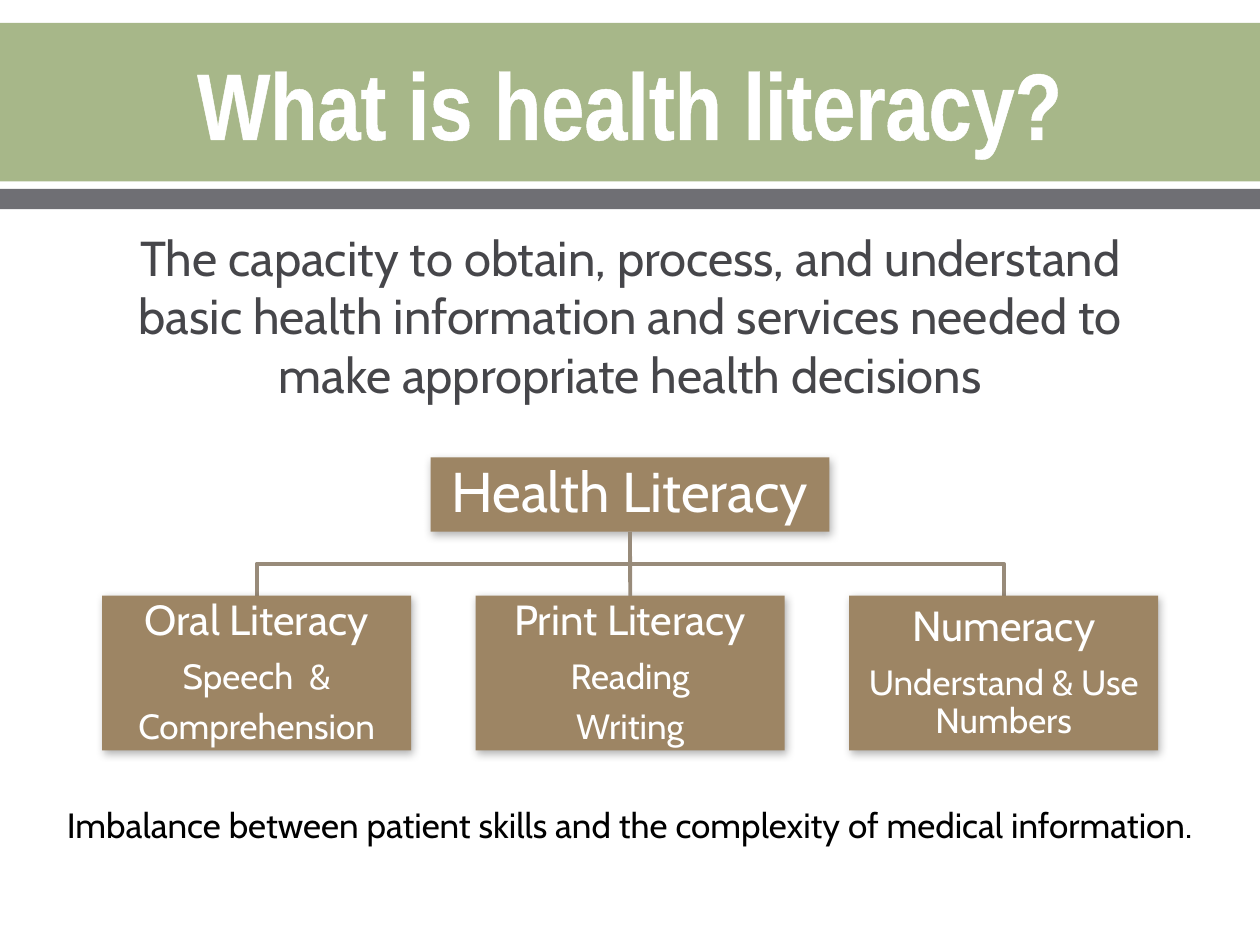
import pptx
import pptx.dml.color
import pptx.enum.shapes
import pptx.enum.text
import pptx.oxml
import pptx.oxml.ns
import pptx.util
from dataclasses import dataclass
from lxml import etree
from pptx.util import Cm, Pt

GREEN, GREY, BROWN, LINE = "A7B789", "6F6F74", "9D8564", "988B7A"
WHITE, BLACK, BODY = "FFFFFF", "000000", "46464A"
NAMESPACE = pptx.oxml.ns.nsdecls("a")
SHADOW = (
    f'<a:effectLst {NAMESPACE}><a:outerShdw blurRad="{Pt(5)}" dist="{Pt(2)}" '
    'dir="3600000" algn="tl" rotWithShape="0"><a:srgbClr val="000000">'
    '<a:alpha val="30000"/></a:srgbClr></a:outerShdw></a:effectLst>'
)
TEXT_OUTLINE = (
    f'<a:ln {NAMESPACE} w="{Pt(1.1)}"><a:solidFill>'
    f'<a:srgbClr val="{WHITE}"/></a:solidFill></a:ln>'
)


@dataclass
class Area:
    left: float
    top: float
    width: float
    height: float

    @property
    def middle(self) -> float:
        return self.left + self.width / 2

    @property
    def bottom(self) -> float:
        return self.top + self.height

    def lengths(self) -> list:
        return [Cm(value) for value in (self.left, self.top, self.width, self.height)]


@dataclass
class Node:
    area: Area
    lines: list[str]
    sizes: list[int]


ROOT = Node(Area(8.68, 9.22, 8.04, 1.5), ["Health Literacy"], [32])
BRANCHES = [
    Node(Area(2.06 + 7.53 * column, 12.01, 6.23, 3.12), lines, [24, 20, 20])
    for column, lines in enumerate([
        ["Oral Literacy", "Speech  &", "Comprehension"],
        ["Print Literacy", "Reading", "Writing"],
        ["Numeracy", "Understand & Use Numbers"],
    ])
]


def rgb(value: str) -> pptx.dml.color.RGBColor:
    return pptx.dml.color.RGBColor.from_string(value)


def place(shape, area: Area) -> None:
    shape.left, shape.top, shape.width, shape.height = area.lengths()


def format_paragraph(para, size: int, color: str, font: str = "Cabin") -> None:
    para.alignment = pptx.enum.text.PP_ALIGN.CENTER
    for span in para.runs:
        span.font.size = Pt(size)
        span.font.name = font
        span.font.color.rgb = rgb(color)


def add_rectangle(page, area: Area, color: str):
    box = page.shapes.add_shape(pptx.enum.shapes.MSO_SHAPE.RECTANGLE, *area.lengths())
    box.shadow.inherit = False
    box.fill.solid()
    box.fill.fore_color.rgb = rgb(color)
    box.line.fill.background()
    return box


def add_band(page, area: Area, color: str) -> None:
    band = add_rectangle(page, area, color)
    page.shapes._spTree.insert(2, band._element)


def add_node(page, node: Node):
    box = add_rectangle(page, node.area, BROWN)
    properties = box._element.spPr
    properties.remove(properties.find(pptx.oxml.ns.qn("a:effectLst")))
    properties.append(pptx.oxml.parse_xml(SHADOW))
    frame = box.text_frame
    frame.word_wrap = True
    frame.vertical_anchor = pptx.enum.text.MSO_ANCHOR.MIDDLE
    frame.margin_left = frame.margin_right = Cm(0.05)
    frame.margin_top = frame.margin_bottom = Cm(0.05)
    frame.text = "\n".join(node.lines)
    for para, size in zip(frame.paragraphs, node.sizes):
        format_paragraph(para, size, WHITE)
        para.line_spacing = 0.9
        spacing = etree.SubElement(para._p.get_or_add_pPr(), pptx.oxml.ns.qn("a:spcAft"))
        etree.SubElement(spacing, pptx.oxml.ns.qn("a:spcPct"), val="35000")
    return box


def style_line(shape) -> None:
    shape.line.color.rgb = rgb(LINE)
    shape.line.width = Pt(2.22)


def add_elbow(page, start: Area, end: Area) -> None:
    turn = (start.bottom + end.top) / 2
    builder = page.shapes.build_freeform(Cm(start.middle), Cm(start.bottom))
    points = [(start.middle, turn), (end.middle, turn), (end.middle, end.top)]
    builder.add_line_segments([(Cm(x), Cm(y)) for x, y in points], close=False)
    elbow = builder.convert_to_shape()
    elbow.fill.background()
    elbow.shadow.inherit = False
    style_line(elbow)


def add_straight(page, start, end) -> None:
    connector = page.shapes.add_connector(pptx.enum.shapes.MSO_CONNECTOR.STRAIGHT, 0, 0, 0, 0)
    connector.begin_connect(start, 2)
    connector.end_connect(end, 0)
    style_line(connector)
    etree.SubElement(connector._element.spPr, pptx.oxml.ns.qn("a:effectLst"))


def fill_title(title) -> None:
    place(title, Area(1.27, 0.51, 22.86, 3.1))
    frame = title.text_frame
    frame.text = "What is health literacy?"
    frame.vertical_anchor = pptx.enum.text.MSO_ANCHOR.MIDDLE
    format_paragraph(frame.paragraphs[0], 54, WHITE, "Arial Narrow")
    for span in frame.paragraphs[0].runs:
        span.font.bold = True
        span._r.get_or_add_rPr().insert(0, pptx.oxml.parse_xml(TEXT_OUTLINE))


def fill_body(body) -> None:
    place(body, Area(2.06, 4.45, 21.28, 3.81))
    frame = body.text_frame
    frame.text = (
        "The capacity to obtain, process, and understand basic health "
        "information and services needed to make appropriate health decisions"
    )
    frame.auto_size = pptx.enum.text.MSO_AUTO_SIZE.NONE
    para = frame.paragraphs[0]
    format_paragraph(para, 28, BODY)
    properties = para._p.get_or_add_pPr()
    properties.set("marL", "0")
    properties.set("indent", "0")
    etree.SubElement(properties, pptx.oxml.ns.qn("a:buNone"))


def add_closing(page) -> None:
    box = page.shapes.add_textbox(*Area(0, 16.08, 25.4, 1.11).lengths())
    frame = box.text_frame
    frame.word_wrap = True
    frame.text = "Imbalance between patient skills and the complexity of medical information."
    format_paragraph(frame.paragraphs[0], 20, BLACK)


def main() -> None:
    deck = pptx.Presentation()
    deck.slide_width, deck.slide_height = Cm(25.4), Cm(19.05)
    page = deck.slides.add_slide(deck.slide_layouts[1])
    add_band(page, Area(0, 3.81, 25.4, 0.41), GREY)
    add_band(page, Area(0, 0.46, 25.4, 3.2), GREEN)
    fill_title(page.shapes.title)
    fill_body(page.placeholders[1])
    for branch in (BRANCHES[0], BRANCHES[2]):
        add_elbow(page, ROOT.area, branch.area)
    root = add_node(page, ROOT)
    boxes = [add_node(page, branch) for branch in BRANCHES]
    add_straight(page, root, boxes[1])
    add_closing(page)
    deck.save("out.pptx")


if __name__ == "__main__":
    main()
